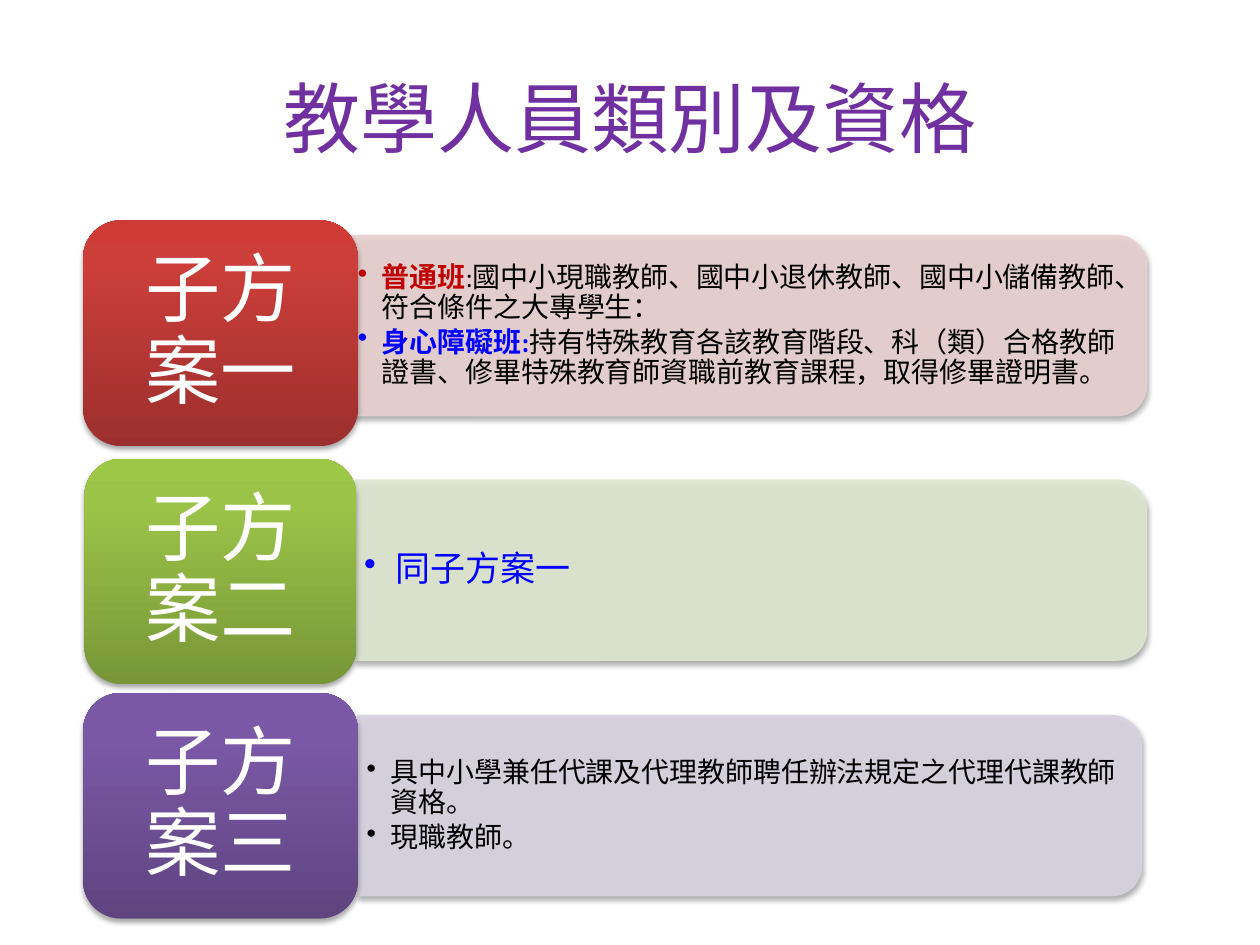
from copy import deepcopy

from lxml.etree import SubElement
from pptx import Presentation
from pptx.dml.color import RGBColor
from pptx.enum.shapes import MSO_SHAPE
from pptx.enum.text import MSO_ANCHOR, PP_ALIGN
from pptx.oxml.ns import qn
from pptx.util import Inches, Pt

FONT = "Cambria"
PANEL_H, LABEL_H = 1.43, 1.79
BLACK, RED, BLUE = "000000", "C00000", "0000FF"

ROWS = [
    dict(
        title="子方案一", label=(0.66, 1.75, 2.18), panel=(2.77, 1.87, 6.33),
        tint="E8D0D0", stops=("9C2F2D", "CB3E3A", "CE3B37"), size=16, indent=0.19,
        items=[
            [("普通班", RED, True),
             (":國中小現職教師、國中小退休教師、國中小儲備教師、符合條件之大專學生：", BLACK, False)],
            [("身心障礙班:", BLUE, True),
             ("持有特殊教育各該教育階段、科（類）合格教師證書、修畢特殊教育師資職前教育課程，取得修畢證明書。",
              BLACK, False)],
        ],
    ),
    dict(
        title="子方案二", label=(0.67, 3.64, 2.16), panel=(2.82, 3.81, 6.28),
        tint="DEE7D1", stops=("779737", "9BC348", "9DC746"), size=20, indent=0.25,
        items=[[("同子方案一", BLUE, False)]],
    ),
    dict(
        title="子方案三", label=(0.66, 5.5, 2.18), panel=(2.84, 5.68, 6.22),
        tint="D8D3E0", stops=("5F4480", "7B58A6", "7C57A8"), size=16, indent=0.19,
        items=[
            [("具中小學兼任代課及代理教師聘任辦法規定之代理代課教師資格。", BLACK, False)],
            [("現職教師。", BLACK, False)],
        ],
    ),
]


def rgb(value):
    return RGBColor.from_string(value)


def set_attrs(target, **values):
    for name, value in values.items():
        setattr(target, name, value)


def add_run(p, text, size, color, bold=False):
    r = p.add_run()
    r.text = text
    set_attrs(r.font, name=FONT, size=Pt(size), bold=bold)
    r.font.color.rgb = rgb(color)


def set_frame(tf, side, edge):
    set_attrs(tf, word_wrap=True, vertical_anchor=MSO_ANCHOR.MIDDLE,
              margin_left=Inches(side), margin_right=Inches(side),
              margin_top=Inches(edge), margin_bottom=Inches(edge))


def add_alpha(parent, percent):
    for color in parent.iter(qn("a:srgbClr")):
        SubElement(color, qn("a:alpha"), val=str(percent * 1000))


def add_shadow(s):
    s.shadow.inherit = False
    effects = s._element.spPr.find(qn("a:effectLst"))
    shadow = SubElement(effects, qn("a:outerShdw"), blurRad=str(Pt(3.1)),
                        dist=str(Pt(1.8)), dir="5400000", rotWithShape="0")
    SubElement(shadow, qn("a:srgbClr"), val=BLACK)
    add_alpha(shadow, 35)


def set_bullet(p, indent):
    pPr = p._p.get_or_add_pPr()
    pPr.set("marL", str(Inches(indent)))
    pPr.set("indent", str(-Inches(indent)))
    SubElement(pPr, qn("a:buChar"), char="•")


def add_title(slide, text, left, top, width, height):
    s = slide.shapes.title
    set_attrs(s, left=Inches(left), top=Inches(top),
              width=Inches(width), height=Inches(height))
    s.text_frame.vertical_anchor = MSO_ANCHOR.MIDDLE
    p = s.text_frame.paragraphs[0]
    p.alignment = PP_ALIGN.CENTER
    add_run(p, text, 44, "7030A0")


def add_panel(slide, row, left, top, width):
    s = slide.shapes.add_shape(
        MSO_SHAPE.ROUND_2_SAME_RECTANGLE,
        Inches(left + (width - PANEL_H) / 2), Inches(top + (PANEL_H - width) / 2),
        Inches(PANEL_H), Inches(width))
    s.rotation = 90
    s.fill.solid()
    s.fill.fore_color.rgb = rgb(row["tint"])
    s.line.color.rgb = rgb(row["tint"])
    s.line.width = Pt(0.75)
    add_alpha(s._element.spPr, 90)
    add_shadow(s)

    box = slide.shapes.add_textbox(Inches(left), Inches(top + 0.07),
                                   Inches(width - 0.07), Inches(PANEL_H - 0.14))
    tf = box.text_frame
    set_frame(tf, 0.07, 0.03)
    for i, runs in enumerate(row["items"]):
        p = tf.add_paragraph() if i else tf.paragraphs[0]
        set_attrs(p, level=1, line_spacing=0.9, space_after=Pt(row["size"] * 0.15))
        set_bullet(p, row["indent"])
        for text, color, bold in runs:
            add_run(p, text, row["size"], color, bold)


def add_label(slide, row, left, top, width):
    s = slide.shapes.add_shape(MSO_SHAPE.ROUNDED_RECTANGLE, Inches(left), Inches(top),
                               Inches(width), Inches(LABEL_H))
    s.fill.gradient()
    s.fill.gradient_angle = 90
    stop_list = s._element.spPr.find(".//" + qn("a:gsLst"))
    stop_list.append(deepcopy(stop_list[-1]))
    for stop, position, color in zip(s.fill.gradient_stops, (0, 0.8, 1), row["stops"]):
        stop.position = position
        stop.color.rgb = rgb(color)
    s.line.fill.background()
    add_shadow(s)

    set_frame(s.text_frame, 0.27, 0.18)
    p = s.text_frame.paragraphs[0]
    set_attrs(p, alignment=PP_ALIGN.CENTER, line_spacing=0.9, space_after=Pt(15))
    add_run(p, row["title"], 43, "FFFFFF")


def main():
    prs = Presentation()
    set_attrs(prs, slide_width=Inches(10), slide_height=Inches(7.5))
    slide = prs.slides.add_slide(prs.slide_layouts[5])
    add_title(slide, "教學人員類別及資格", 0.5, 0.3, 9, 1.25)
    for row in ROWS:
        add_panel(slide, row, *row["panel"])
        add_label(slide, row, *row["label"])
    prs.save("out.pptx")


if __name__ == "__main__":
    main()
